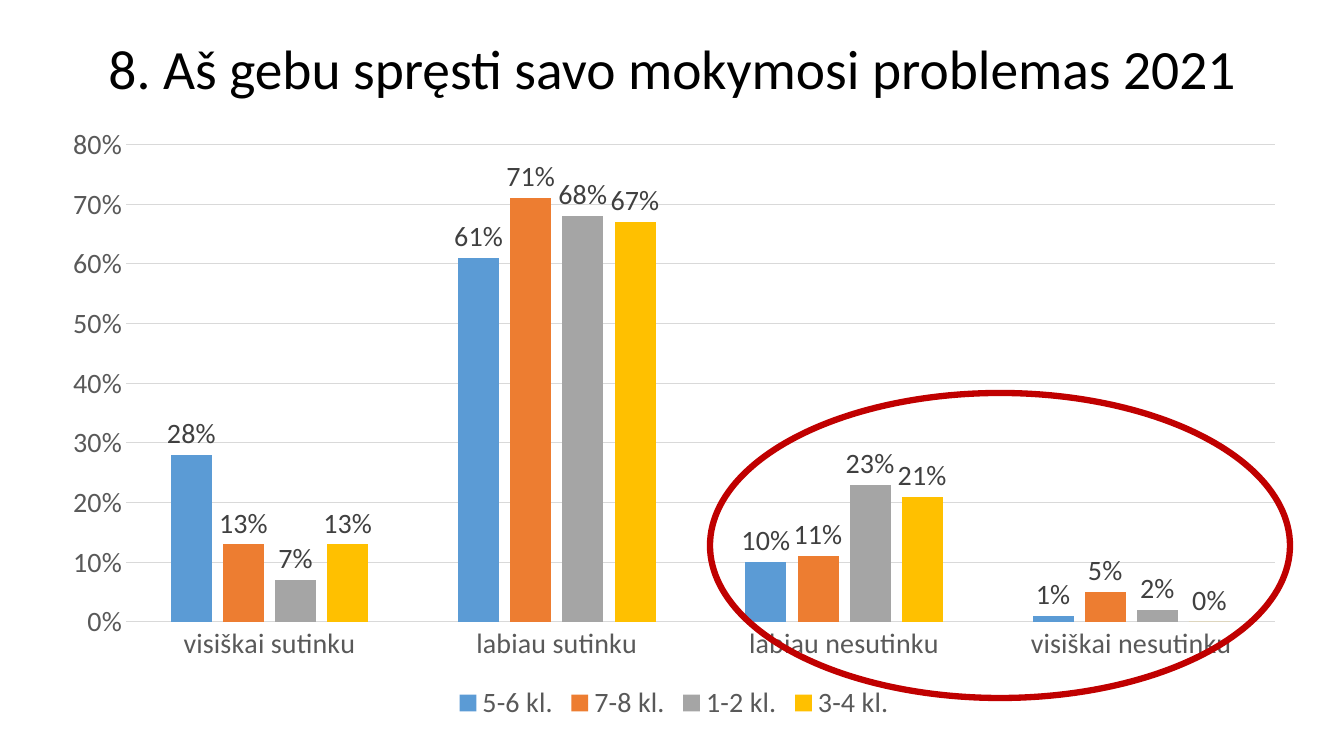
import pptx
import pptx.chart.data
import pptx.dml.color
import pptx.enum.chart
import pptx.enum.shapes
import pptx.enum.text
import pptx.util

RGBColor = pptx.dml.color.RGBColor
BLACK = RGBColor(0x00, 0x00, 0x00)
AXIS_GREY = RGBColor(0x59, 0x59, 0x59)
LABEL_GREY = RGBColor(0x40, 0x40, 0x40)
GRID_GREY = RGBColor(0xD9, 0xD9, 0xD9)
BLUE = RGBColor(0x5B, 0x9B, 0xD5)
ORANGE = RGBColor(0xED, 0x7D, 0x31)
GREY = RGBColor(0xA5, 0xA5, 0xA5)
YELLOW = RGBColor(0xFF, 0xC0, 0x00)
RED = RGBColor(0xC0, 0x00, 0x00)

FONT = "Calibri"
PERCENT = "0%"
TITLE = "8. Aš gebu spręsti savo mokymosi problemas 2021"
ANSWERS = ["visiškai sutinku", "labiau sutinku", "labiau nesutinku", "visiškai nesutinku"]
CLASSES = [
    ("5-6 kl.", (0.28, 0.61, 0.10, 0.01), BLUE),
    ("7-8 kl.", (0.13, 0.71, 0.11, 0.05), ORANGE),
    ("1-2 kl.", (0.07, 0.68, 0.23, 0.02), GREY),
    ("3-4 kl.", (0.13, 0.67, 0.21, 0), YELLOW),
]

# left, top, width, height in px
SLIDE_SIZE = (1344, 756)
TITLE_BOX = (93, 40, 1159, 63)
CHART_BOX = (48, 115, 1252, 611)
HIGHLIGHT_BOX = (710, 393, 580, 305)
EMU_PER_PX = 914400 / 100.8


def emu(lengths):
    return [pptx.util.Emu(round(length * EMU_PER_PX)) for length in lengths]


def format_font(font, size, color):
    font.name = FONT
    font.size = pptx.util.Pt(size)
    font.color.rgb = color


def write_text(frame, text, size, color, align, spacing):
    para = frame.paragraphs[0]
    para.alignment = align
    para.line_spacing = spacing
    span = para.add_run()
    span.text = text
    format_font(span.font, size, color)


def add_title(page):
    box = page.shapes.title
    box.left, box.top, box.width, box.height = emu(TITLE_BOX)
    frame = box.text_frame
    frame.word_wrap = True
    frame.auto_size = pptx.enum.text.MSO_AUTO_SIZE.NONE
    frame.vertical_anchor = pptx.enum.text.MSO_ANCHOR.MIDDLE
    write_text(frame, TITLE, size=39.6, color=BLACK,
               align=pptx.enum.text.PP_ALIGN.CENTER, spacing=0.9)


def format_axes(chart):
    no_tick = pptx.enum.chart.XL_TICK_MARK.NONE
    for axis in (chart.category_axis, chart.value_axis):
        axis.major_tick_mark = axis.minor_tick_mark = no_tick
        format_font(axis.tick_labels.font, 20, AXIS_GREY)

    values = chart.value_axis
    values.minimum_scale, values.maximum_scale, values.major_unit = 0, 0.8, 0.1
    values.tick_labels.number_format = PERCENT
    values.tick_labels.number_format_is_linked = False
    values.has_major_gridlines = True
    values.format.line.fill.background()

    for line in (chart.category_axis.format.line, values.major_gridlines.format.line):
        line.color.rgb = GRID_GREY
        line.width = pptx.util.Pt(0.75)


def format_series(series, color):
    series.invert_if_negative = False
    series.format.fill.solid()
    series.format.fill.fore_color.rgb = color
    labels = series.data_labels
    labels.show_value = True
    labels.number_format = PERCENT
    labels.number_format_is_linked = False
    labels.position = pptx.enum.chart.XL_LABEL_POSITION.OUTSIDE_END
    format_font(labels.font, 20, LABEL_GREY)


def add_answer_chart(page):
    data = pptx.chart.data.CategoryChartData(number_format=PERCENT)
    data.categories = ANSWERS
    for name, shares, _ in CLASSES:
        data.add_series(name, shares)
    kind = pptx.enum.chart.XL_CHART_TYPE.COLUMN_CLUSTERED
    chart = page.shapes.add_chart(kind, *emu(CHART_BOX), data).chart
    format_font(chart.font, 10, BLACK)
    chart.has_title = False
    format_axes(chart)

    plot = chart.plots[0]
    plot.gap_width, plot.overlap = 219, -27
    plot.vary_by_categories = False
    for series, (_, _, color) in zip(plot.series, CLASSES):
        format_series(series, color)

    chart.has_legend = True
    chart.legend.position = pptx.enum.chart.XL_LEGEND_POSITION.BOTTOM
    chart.legend.include_in_layout = False
    format_font(chart.legend.font, 20, AXIS_GREY)


def add_highlight(page):
    ellipse = page.shapes.add_shape(pptx.enum.shapes.MSO_SHAPE.OVAL, *emu(HIGHLIGHT_BOX))
    ellipse.shadow.inherit = False
    ellipse.fill.background()
    ellipse.line.color.rgb = RED
    ellipse.line.width = pptx.util.Pt(4.5)


def main():
    deck = pptx.Presentation()
    deck.slide_width, deck.slide_height = emu(SLIDE_SIZE)
    page = deck.slides.add_slide(deck.slide_layouts.get_by_name("Title Only"))
    add_title(page)
    add_answer_chart(page)
    add_highlight(page)
    deck.save("out.pptx")


if __name__ == "__main__":
    main()
